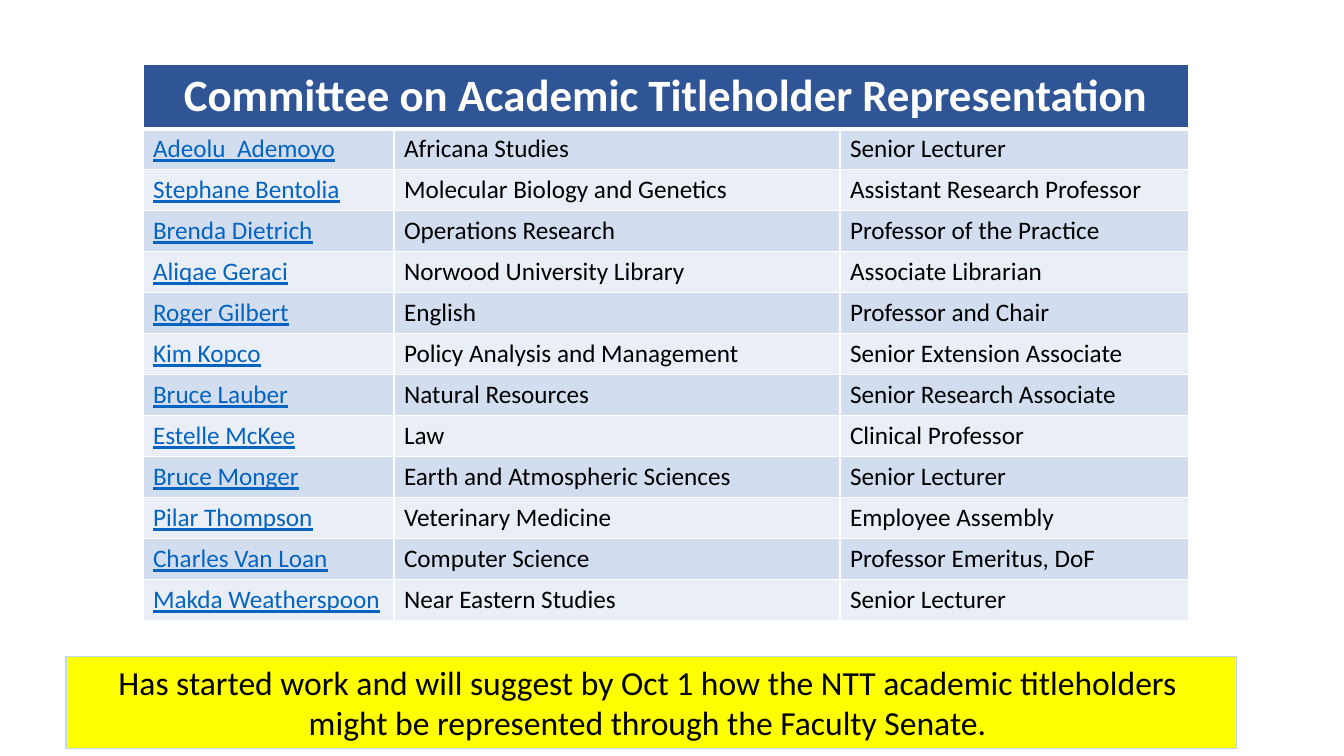
from lxml.etree import SubElement
from pptx import Presentation
from pptx.dml.color import RGBColor
from pptx.enum.shapes import MSO_SHAPE
from pptx.enum.text import MSO_ANCHOR, PP_ALIGN
from pptx.oxml.ns import qn
from pptx.util import Emu, Pt

EMU_PER_PX = 914400 / 100.8

TITLE = "Committee on Academic Titleholder Representation"
MEMBERS = [
    ("Adeolu  Ademoyo", "Africana Studies", "Senior Lecturer"),
    ("Stephane Bentolia", "Molecular Biology and Genetics", "Assistant Research Professor"),
    ("Brenda Dietrich", "Operations Research", "Professor of the Practice"),
    ("Aliqae Geraci", "Norwood University Library", "Associate Librarian"),
    ("Roger Gilbert", "English", "Professor and Chair"),
    ("Kim Kopco", "Policy Analysis and Management", "Senior Extension Associate"),
    ("Bruce Lauber", "Natural Resources", "Senior Research Associate"),
    ("Estelle McKee", "Law", "Clinical Professor"),
    ("Bruce Monger", "Earth and Atmospheric Sciences", "Senior Lecturer"),
    ("Pilar Thompson", "Veterinary Medicine", "Employee Assembly"),
    ("Charles Van Loan", "Computer Science", "Professor Emeritus, DoF"),
    ("Makda Weatherspoon", "Near Eastern Studies", "Senior Lecturer"),
]
STATUS = [
    "Has started work and will suggest by Oct 1 how the NTT academic titleholders ",
    "might be represented through the Faculty Senate. ",
]


def px(length):
    return Emu(round(length * EMU_PER_PX))


def color(value):
    return RGBColor.from_string(value)


class SlideBuilder:
    font = "Calibri"
    white = "FFFFFF"
    black = "000000"
    header_fill = "2F5597"
    band_fills = ("D2DEEF", "EAEFF7")
    name_color = "0563C1"

    def __init__(self, slide):
        self.slide = slide

    def run(self, paragraph, text, size, text_color, bold=False, underline=False):
        run = paragraph.add_run()
        run.text = text
        run.font.name = self.font
        run.font.size = Pt(size)
        run.font.bold = bold
        run.font.underline = underline
        run.font.color.rgb = color(text_color)

    def borders(self, cell, top=1, bottom=1):
        """Draw white cell borders; widths are in points."""
        properties = cell._tc.get_or_add_tcPr()
        for side, width in (("L", 1), ("R", 1), ("T", top), ("B", bottom)):
            line = SubElement(properties, qn(f"a:ln{side}"), w=str(Pt(width)))
            fill = SubElement(line, qn("a:solidFill"))
            SubElement(fill, qn("a:srgbClr"), val=self.white)

    def fill_cell(self, cell, value):
        cell.fill.solid()
        cell.fill.fore_color.rgb = color(value)

    def member_table(self, left, top, widths, header_height, row_height):
        height = header_height + row_height * len(MEMBERS)
        table = self.slide.shapes.add_table(
            len(MEMBERS) + 1, len(widths), px(left), px(top), px(sum(widths)), px(height)
        ).table
        for column, width in zip(table.columns, widths):
            column.width = px(width)
        for row in table.rows:
            row.height = px(row_height)
        table.rows[0].height = px(header_height)

        for column in range(len(widths)):
            cell = table.cell(0, column)
            self.borders(cell, bottom=3)
            self.fill_cell(cell, self.header_fill)
        header = table.cell(0, 0)
        header.merge(table.cell(0, len(widths) - 1))
        paragraph = header.text_frame.paragraphs[0]
        paragraph.alignment = PP_ALIGN.CENTER
        self.run(paragraph, TITLE, 32, self.white, bold=True)

        for row, member in enumerate(MEMBERS, start=1):
            for column, text in enumerate(member):
                cell = table.cell(row, column)
                self.borders(cell, top=3 if row == 1 else 1)
                self.fill_cell(cell, self.band_fills[(row - 1) % 2])
                is_name = column == 0
                self.run(cell.text_frame.paragraphs[0], text, 18,
                         self.name_color if is_name else self.black, underline=is_name)

    def banner(self, left, top, width, height, lines):
        shape = self.slide.shapes.add_shape(
            MSO_SHAPE.RECTANGLE, px(left), px(top), px(width), px(height)
        )
        shape.shadow.inherit = False
        shape.fill.solid()
        shape.fill.fore_color.rgb = color("FFFF00")
        shape.line.color.rgb = color("BDD7EE")
        shape.line.width = Pt(0.75)
        frame = shape.text_frame
        frame.word_wrap = True
        frame.vertical_anchor = MSO_ANCHOR.TOP
        for index, text in enumerate(lines):
            paragraph = frame.add_paragraph() if index else frame.paragraphs[0]
            paragraph.alignment = PP_ALIGN.CENTER
            self.run(paragraph, text, 24, self.black)


def main():
    presentation = Presentation()
    presentation.slide_width = px(1344)
    presentation.slide_height = px(756)
    slide = presentation.slides.add_slide(presentation.slide_layouts[6])
    builder = SlideBuilder(slide)
    builder.member_table(143, 64, (251, 446, 349), 64, 41)
    builder.banner(66, 657, 1171, 92, STATUS)
    presentation.save("out.pptx")


if __name__ == "__main__":
    main()
